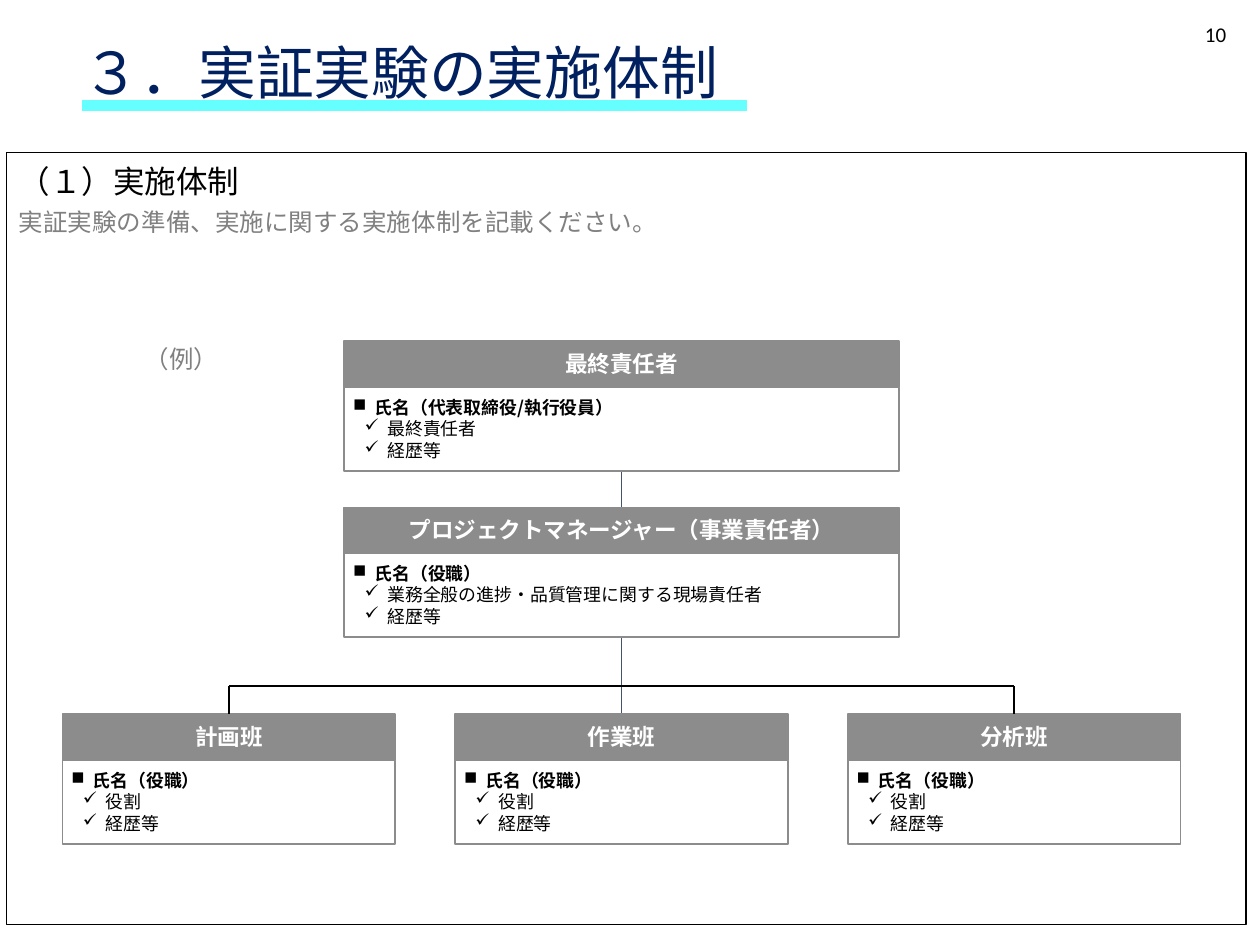
import dataclasses

import lxml.etree
import pptx
import pptx.dml.color
import pptx.enum.shapes
import pptx.enum.text
import pptx.oxml.ns
import pptx.util

Cm = pptx.util.Cm
Pt = pptx.util.Pt
Align = pptx.enum.text.PP_ALIGN
Anchor = pptx.enum.text.MSO_ANCHOR
Shapes = pptx.enum.shapes.MSO_SHAPE


@dataclasses.dataclass(frozen=True)
class Theme:
    """Colours, fonts and type sizes of the deck."""

    navy: str = "002060"
    cyan: str = "66FFFF"
    slate: str = "44546A"
    gray: str = "8C8C8C"
    hint: str = "808080"
    black: str = "000000"
    white: str = "FFFFFF"
    latin: str = "Calibri"
    japanese: str = "Noto Sans CJK JP"
    title: float = 33
    section: float = 18
    guide: float = 14
    role: float = 12.9
    detail: float = 10.2
    number: float = 12


THEME = Theme()


def rgb(code):
    """Return the colour for a hex code."""
    return pptx.dml.color.RGBColor.from_string(code)


def add_line(page, start, end, color, width):
    """Draw a straight line between two points in centimetres."""
    line = page.shapes.add_connector(
        pptx.enum.shapes.MSO_CONNECTOR.STRAIGHT, *map(Cm, (*start, *end)))
    line.line.color.rgb = rgb(color)
    line.line.width = Pt(width)
    properties = line._element.spPr
    lxml.etree.SubElement(properties, pptx.oxml.ns.qn("a:effectLst"))


def add_rectangle(page, box, fill, outline, width, inset=(0.25, 0.13)):
    """Draw an outlined rectangle and return its text frame."""
    shape = page.shapes.add_shape(Shapes.RECTANGLE, *map(Cm, box))
    shape.shadow.inherit = False
    if fill:
        shape.fill.solid()
        shape.fill.fore_color.rgb = rgb(fill)
    else:
        shape.fill.background()
    shape.line.color.rgb = rgb(outline)
    shape.line.width = Pt(width)
    return set_frame(shape.text_frame, inset)


def set_frame(frame, inset):
    """Set wrapping, top anchor and insets of a text frame."""
    frame.word_wrap = True
    frame.vertical_anchor = Anchor.TOP
    frame.margin_left = frame.margin_right = Cm(inset[0])
    frame.margin_top = frame.margin_bottom = Cm(inset[1])
    return frame


def write(para, text, size, color, font=THEME.japanese, bold=False,
          align=Align.LEFT, spacing=None, before=0):
    """Fill a paragraph and set its type."""
    para.text = text
    para.alignment = align
    para.line_spacing = spacing
    para.space_before = Pt(before)
    para.font.size = Pt(size)
    para.font.bold = bold
    para.font.color.rgb = rgb(color)
    para.font.name = font
    east_asian = lxml.etree.Element(
        pptx.oxml.ns.qn("a:ea"), typeface=THEME.japanese)
    para.font._element.find(pptx.oxml.ns.qn("a:latin")).addnext(east_asian)


def indent(para, left, hanging=0, bullet=None):
    """Indent a paragraph and give it a hanging bullet if there is one."""
    properties = para._p.get_or_add_pPr()
    properties.set("marL", str(Cm(left)))
    properties.set("indent", str(-Cm(hanging)))
    if bullet:
        mark = lxml.etree.Element(pptx.oxml.ns.qn("a:buChar"), char=bullet)
        properties.find(pptx.oxml.ns.qn("a:defRPr")).addprevious(mark)


def add_heading(page, box, text):
    """Place the slide title over its cyan rule."""
    left, top, width, height = box
    shape = page.shapes.add_textbox(*map(Cm, box))
    frame = set_frame(shape.text_frame, (0.25, 0))
    write(frame.paragraphs[0], text, THEME.title, THEME.navy, THEME.latin,
          spacing=Pt(42))
    rule = top + 1.47
    add_line(page, (left + 0.23, rule), (left + 13.64, rule), THEME.cyan, 6)


def add_page_number(page, box, number):
    """Place the page number at the right of its box."""
    shape = page.shapes.add_textbox(*map(Cm, box))
    frame = set_frame(shape.text_frame, (0.25, 0.13))
    write(frame.paragraphs[0], number, THEME.number, THEME.black, THEME.latin,
          align=Align.RIGHT)


def add_card(page, box, role, name, details):
    """Place one member card: a role band above a bulleted description."""
    left, top, width, height = box
    band = 0.93
    body = add_rectangle(page, (left, top + band, width, height - band),
                         THEME.white, THEME.gray, 1, (0.18, 0.18))
    for index, text in enumerate((name, *details)):
        para = body.add_paragraph() if index else body.paragraphs[0]
        write(para, text, THEME.detail, THEME.black, bold=index == 0,
              spacing=Pt(12.3))
        if index:
            indent(para, 0.69, 0.46, "✓")
        else:
            indent(para, 0.43, 0.43, "■")
    head = add_rectangle(page, (left, top, width, band),
                         THEME.gray, THEME.gray, 1, (0.18, 0.18))
    head.word_wrap = False
    head.vertical_anchor = Anchor.MIDDLE
    write(head.paragraphs[0], role, THEME.role, THEME.white, bold=True,
          align=Align.CENTER, spacing=0.95)


def add_organisation(page, box, leaders, teams):
    """Place the chart: leaders stacked above a row of teams."""
    left, top, width, height = box
    card_height, leader_width, team_width = 2.61, 11.18, 6.71
    center = left + width / 2
    team_top = top + height - card_height
    pitch = (width - team_width) / (len(teams) - 1)
    first, last = left + team_width / 2, left + width - team_width / 2
    bar = team_top - 0.57

    add_line(page, (center, top + card_height), (center, team_top),
             THEME.slate, 1)
    for index, leader in enumerate(leaders):
        add_card(page, (center - leader_width / 2, top + index * 3.35,
                        leader_width, card_height), *leader)
    for index, team in enumerate(teams):
        add_card(page, (left + index * pitch, team_top, team_width,
                        card_height), team, "氏名（役職）", ("役割", "経歴等"))
    add_line(page, (first, bar), (last, bar), THEME.black, 1)
    for x in (first, last):
        add_line(page, (x, bar), (x, team_top), THEME.black, 1)


def add_section(page, box):
    """Place the section frame with its heading, guidance and example mark."""
    frame = add_rectangle(page, box, None, THEME.black, 0.75)
    heading, guide = frame.paragraphs[0], frame.add_paragraph()
    example = frame.add_paragraph()
    write(heading, "（１）実施体制", THEME.section, THEME.black,
          spacing=Pt(23.5))
    write(guide, "実証実験の準備、実施に関する実施体制を記載ください。",
          THEME.guide, THEME.hint, spacing=Pt(17), before=4)
    write(example, "（例）", THEME.guide, THEME.hint, spacing=Pt(17), before=61)
    indent(example, 2.54)


def main():
    """Build the slide and save the deck."""
    deck = pptx.Presentation()
    deck.slide_width, deck.slide_height = Cm(25.4), Cm(19.05)
    page = deck.slides.add_slide(deck.slide_layouts[6])
    add_heading(page, (1.42, 0.66, 21.87, 2.13), "３．実証実験の実施体制")
    add_page_number(page, (19.25, 0.3, 5.72, 1.02), "10")
    leaders = (
        ("最終責任者", "氏名（代表取締役/執行役員）", ("最終責任者", "経歴等")),
        ("プロジェクトマネージャー（事業責任者）", "氏名（役職）",
         ("業務全般の進捗・品質管理に関する現場責任者", "経歴等")),
    )
    add_organisation(page, (1.26, 6.88, 22.54, 10.13), leaders,
                     ("計画班", "作業班", "分析班"))
    add_section(page, (0.13, 3.07, 24.99, 15.57))
    deck.save("out.pptx")


if __name__ == "__main__":
    main()
